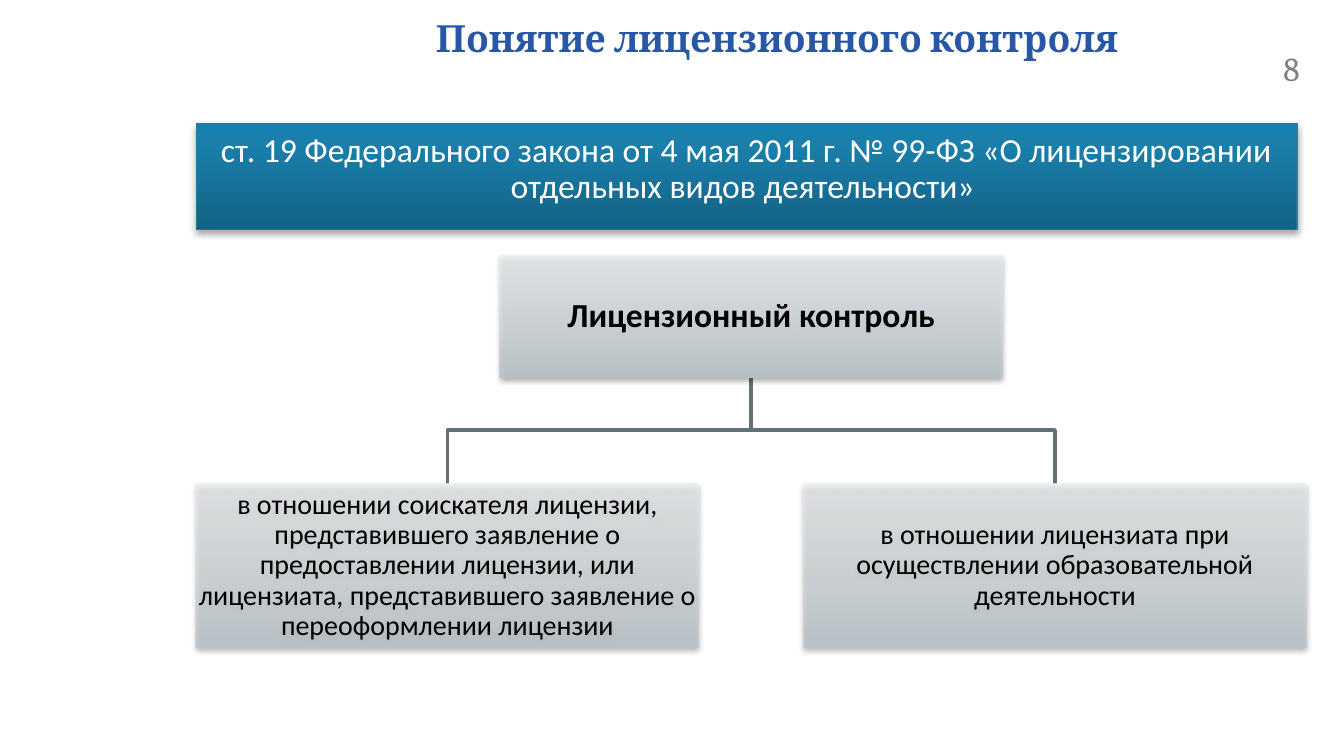
from lxml.etree import SubElement as Sub
from pptx import Presentation
from pptx.dml.color import RGBColor as RGB
from pptx.enum.shapes import MSO_SHAPE as Shape
from pptx.enum.text import MSO_ANCHOR as Anchor, PP_ALIGN as Align
from pptx.oxml.ns import qn
from pptx.util import Pt

PX = 9144  # EMU in one px, 100 px to the inch
BLUE = RGB(0x28, 0x57, 0xA5)
GREY = RGB(0x80, 0x80, 0x80)
SLATE = RGB(0x62, 0x71, 0x78)
EDGE = RGB(0x28, 0x7A, 0x9E)
BLACK = RGB(0, 0, 0)
WHITE = RGB(0xFF, 0xFF, 0xFF)
SILVER = [(0, RGB(0xB8, 0xC3, 0xCA)), (35, RGB(0xCD, 0xD5, 0xD9)),
          (100, RGB(0xEC, 0xEF, 0xF1))]
TEAL = [(0, RGB(0x14, 0x62, 0x84)), (80, RGB(0x1A, 0x7F, 0xAB)),
        (100, RGB(0x17, 0x80, 0xAE))]


def emu(*vals):
    return [v * PX for v in vals]


def write(shape, text, size, color, face="Calibri", bold=False,
          align=Align.CENTER, lead=0.9, anchor=Anchor.MIDDLE, pad=(1, 1)):
    frame = shape.text_frame
    frame.word_wrap = True
    frame.vertical_anchor = anchor
    frame.margin_left = frame.margin_right = pad[0] * PX
    frame.margin_top = frame.margin_bottom = pad[1] * PX
    frame.text = text
    para = frame.paragraphs[0]
    para.alignment, para.line_spacing = align, lead
    font = para.font
    font.name, font.size, font.bold = face, Pt(size), bold
    font.color.rgb = color


def add_color(parent, color, alpha):
    node = Sub(parent, qn("a:srgbClr"), val=str(color))
    Sub(node, qn("a:alpha"), val=str(alpha * 1000))


def panel(slide, box, stops, alpha, shade, drop):
    """Rectangle with a vertical gradient and a soft shadow below."""
    shape = slide.shapes.add_shape(Shape.RECTANGLE, *emu(*box))
    shape.line.fill.background()
    shape.fill.gradient()
    shape.fill.gradient_angle = 90
    props = shape._element.spPr
    ramp = props.find(qn("a:gradFill")).find(qn("a:gsLst"))
    for stop in list(ramp):
        ramp.remove(stop)
    for pos, color in stops:
        add_color(Sub(ramp, qn("a:gs"), pos=str(pos * 1000)), color, alpha)
    shape.shadow.inherit = False
    shadow = Sub(props.find(qn("a:effectLst")), qn("a:outerShdw"),
                 blurRad="40000", dist=str(drop), dir="5400000", rotWithShape="0")
    add_color(shadow, BLACK, shade)
    return shape


def header(slide, box, text):
    title = slide.shapes.title
    title.left, title.top, title.width, title.height = emu(*box)
    write(title, text, 20, BLUE, "Cambria", True, lead=0.8,
          anchor=Anchor.TOP, pad=(10, 5))


def page(slide, box, num):
    write(slide.shapes.add_textbox(*emu(*box)), num, 18, GREY, "Cambria",
          align=Align.LEFT, lead=1.0, anchor=Anchor.TOP, pad=(10, 5))


def banner(slide, box, text):
    shape = panel(slide, box, TEAL, 100, 35, 23000)
    shape.line.color.rgb = EDGE
    shape.line.width = Pt(0.75)
    write(shape, text, 18, WHITE, anchor=Anchor.TOP, pad=(14, 7))


def branch(slide, start, end):
    (x, y), (to_x, to_y) = start, end
    mid = (y + to_y) // 2
    path = slide.shapes.build_freeform(x, y, scale=PX)
    path.add_line_segments([(x, mid), (to_x, mid), end], close=False)
    line = path.convert_to_shape()
    line.fill.background()
    line.line.color.rgb = SLATE
    line.line.width = Pt(2)
    line.shadow.inherit = False


def tree(slide, box, root, leaves):
    """Root box centred on top, leaves spread evenly along the bottom."""
    x, y, w, h = box
    wide, tall, low = 374, 91, 122
    step = (w - wide) // (len(leaves) - 1)
    top = y + h - low
    root_x = x + (w - wide) // 2
    spots = [x + i * step for i in range(len(leaves))]
    for spot in reversed(spots):
        branch(slide, (root_x + wide // 2, y + tall), (spot + wide // 2, top))
    head = panel(slide, (root_x, y, wide, tall), SILVER, 80, 38, 20000)
    write(head, root, 18, BLACK, bold=True)
    for spot, text in zip(spots, leaves):
        leaf = panel(slide, (spot, top, wide, low), SILVER, 70, 38, 20000)
        write(leaf, text, 15, BLACK)


def main():
    deck = Presentation()
    deck.slide_width = 1000 * PX
    deck.slide_height = deck.slide_width * 9 // 16
    slide = deck.slides.add_slide(deck.slide_layouts[5])
    header(slide, (262, 13, 632, 63), "Понятие лицензионного контроля")
    page(slide, (945, 31, 55, 30), "8")
    tree(slide, (146, 190, 826, 292), "Лицензионный контроль", [
        "в отношении соискателя лицензии, представившего заявление о "
        "предоставлении лицензии, или лицензиата, представившего заявление о "
        "переоформлении лицензии",
        "в отношении лицензиата при осуществлении образовательной деятельности",
    ])
    banner(slide, (146, 92, 819, 79),
           "ст. 19 Федерального закона от 4 мая 2011 г. № 99-ФЗ "
           "«О лицензировании отдельных видов деятельности» ")
    deck.save("out.pptx")


if __name__ == "__main__":
    main()
